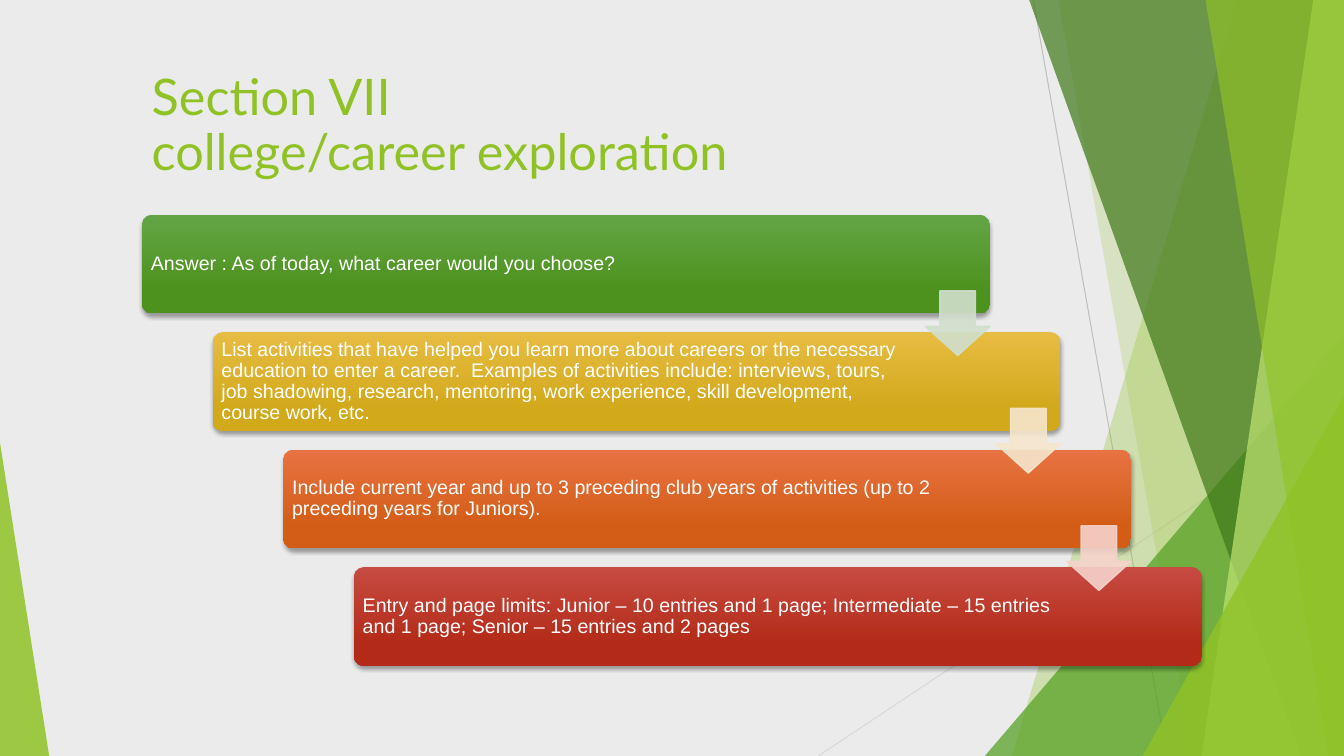
"""Build the "Section VII college/career exploration" slide: a descending cascade of four steps."""
from dataclasses import dataclass

from lxml.etree import SubElement
from pptx import Presentation
from pptx.dml.color import RGBColor
from pptx.enum.shapes import MSO_CONNECTOR, MSO_SHAPE
from pptx.enum.text import MSO_ANCHOR, MSO_AUTO_SIZE, PP_ALIGN
from pptx.oxml.ns import qn
from pptx.util import Cm, Pt

SLIDE_WIDTH, SLIDE_HEIGHT = 33.87, 19.05
FACET_TOP = -0.02
CARD_LEFT, CARD_TOP, CARD_WIDTH, CARD_HEIGHT = 3.58, 5.41, 21.36, 2.49
ARROW_LEFT, ARROW_TOP, ARROW_SIZE = 23.32, 7.33, 1.63
STEP_RIGHT, STEP_DOWN = 1.78, 2.96

BACKGROUND = RGBColor(0xEB, 0xEB, 0xEB)
WHITE = RGBColor(0xFF, 0xFF, 0xFF)
LIME = RGBColor(0x90, 0xC2, 0x26)
PALE_LIME = RGBColor(0xC0, 0xE4, 0x74)
GREEN = RGBColor(0x54, 0xA0, 0x21)
DARK_GREEN = RGBColor(0x3F, 0x78, 0x19)
GREY = RGBColor(0xBF, 0xBF, 0xBF)
LIGHT_GREY = RGBColor(0xD9, 0xD9, 0xD9)
GREEN_TOP, GREEN_BOTTOM = RGBColor(0x63, 0xA5, 0x45), RGBColor(0x4D, 0x92, 0x1E)
GOLD_TOP, GOLD_BOTTOM = RGBColor(0xE7, 0xBC, 0x43), RGBColor(0xD2, 0xA9, 0x1B)
ORANGE_TOP, ORANGE_BOTTOM = RGBColor(0xE8, 0x72, 0x42), RGBColor(0xD3, 0x5D, 0x16)
RED_TOP, RED_BOTTOM = RGBColor(0xC7, 0x4B, 0x42), RGBColor(0xB3, 0x2B, 0x18)
ARROW_COLORS = (
    RGBColor(0xD1, 0xDF, 0xCD),
    RGBColor(0xF5, 0xE6, 0xCD),
    RGBColor(0xF6, 0xD3, 0xCC),
)


@dataclass(frozen=True)
class Ray:
    """A thin straight line across the backdrop."""
    start: tuple[float, float]
    end: tuple[float, float]
    color: RGBColor


@dataclass(frozen=True)
class Facet:
    """A full-height band from a slanted left edge to the right slide edge."""
    top_x: float
    bottom_x: float
    color: RGBColor
    opacity: int


@dataclass(frozen=True)
class Wedge:
    """A right triangle standing on the bottom slide edge."""
    left: float
    top: float
    width: float
    apex: float
    color: RGBColor
    opacity: int


@dataclass(frozen=True)
class Step:
    """One card of the cascade."""
    text: str
    top_color: RGBColor
    bottom_color: RGBColor


RAYS = (
    Ray((26.04, 0), (29.41, SLIDE_HEIGHT), GREY),
    Ray((SLIDE_WIDTH, 10.24), (20.62, SLIDE_HEIGHT), LIGHT_GREY),
)
BACKDROP = (
    Facet(31.19, 25.5, LIME, 30),
    Facet(26.67, 30.05, LIME, 20),
    Wedge(24.82, 8.46, 9.05, 1, GREEN, 72),
    Facet(25.93, 32.79, DARK_GREEN, 70),
    Facet(33.1, 30.28, PALE_LIME, 70),
    Facet(30.38, 33.48, LIME, 65),
    Wedge(28.8, 9.98, 5.07, 1, LIME, 80),
    Wedge(0, 11.15, 1.24, 0, LIME, 85),
)
STEPS = (
    Step("Answer : As of today, what career would you choose?", GREEN_TOP, GREEN_BOTTOM),
    Step("List activities that have helped you learn more about careers or the necessary "
         "education to enter a career.  Examples of activities include: interviews, tours, "
         "job shadowing, research, mentoring, work experience, skill development, "
         "course work, etc.", GOLD_TOP, GOLD_BOTTOM),
    Step("Include current year and up to 3 preceding club years of activities (up to 2 "
         "preceding years for Juniors).", ORANGE_TOP, ORANGE_BOTTOM),
    Step("Entry and page limits: Junior – 10 entries and 1 page; Intermediate – 15 entries "
         "and 1 page; Senior – 15 entries and 2 pages", RED_TOP, RED_BOTTOM),
)


def set_opacity(shape, percent: int) -> None:
    """Make every colour of the shape's fill and line translucent."""
    for color in shape.element.spPr.iter(qn("a:srgbClr")):
        SubElement(color, qn("a:alpha"), val=str(percent * 1000))


def draw_ray(slide, ray: Ray) -> None:
    """Draw one thin backdrop line."""
    connector = slide.shapes.add_connector(
        MSO_CONNECTOR.STRAIGHT, *(Cm(value) for value in ray.start + ray.end))
    connector.line.color.rgb = ray.color
    connector.line.width = Pt(0.75)
    SubElement(connector.element.spPr, qn("a:effectLst"))


def draw_backdrop_part(slide, part: Facet | Wedge) -> None:
    """Draw one translucent facet or wedge."""
    if isinstance(part, Facet):
        top, right, bottom = Cm(FACET_TOP), Cm(SLIDE_WIDTH), Cm(SLIDE_HEIGHT)
        builder = slide.shapes.build_freeform(Cm(part.top_x), top)
        builder.add_line_segments([(right, top), (right, bottom), (Cm(part.bottom_x), bottom)])
        shape = builder.convert_to_shape()
    else:
        shape = slide.shapes.add_shape(
            MSO_SHAPE.ISOSCELES_TRIANGLE, Cm(part.left), Cm(part.top),
            Cm(part.width), Cm(SLIDE_HEIGHT - part.top))
        shape.adjustments[0] = part.apex
    shape.shadow.inherit = False
    shape.fill.solid()
    shape.fill.fore_color.rgb = part.color
    shape.line.fill.background()
    set_opacity(shape, part.opacity)


def write_title(slide) -> None:
    """Place and format the title."""
    title = slide.shapes.title
    title.left, title.top, title.width, title.height = Cm(3.57), Cm(1.67), Cm(28.32), Cm(3.05)
    frame = title.text_frame
    frame.text = "Section VII \vcollege/career exploration"
    frame.auto_size = MSO_AUTO_SIZE.NONE
    frame.vertical_anchor = MSO_ANCHOR.MIDDLE
    paragraph = frame.paragraphs[0]
    paragraph.alignment = PP_ALIGN.LEFT
    paragraph.line_spacing = 0.9
    paragraph.font.name = "Lato"
    paragraph.font.size = Pt(36)
    paragraph.font.color.rgb = LIME


def add_soft_shadow(shape) -> None:
    """Give the shape a short shadow straight below it."""
    shape.shadow.inherit = False
    effects = shape.element.spPr.find(qn("a:effectLst"))
    shadow = SubElement(effects, qn("a:outerShdw"), blurRad=str(Pt(3)), dist=str(Pt(2)),
                        dir="5400000", rotWithShape="0")
    color = SubElement(shadow, qn("a:srgbClr"), val="000000")
    SubElement(color, qn("a:alpha"), val="35000")


def draw_card(slide, index: int, step: Step) -> None:
    """Draw one card of the cascade with its text."""
    card = slide.shapes.add_shape(
        MSO_SHAPE.ROUNDED_RECTANGLE, Cm(CARD_LEFT + index * STEP_RIGHT),
        Cm(CARD_TOP + index * STEP_DOWN), Cm(CARD_WIDTH), Cm(CARD_HEIGHT))
    card.adjustments[0] = 0.1
    card.line.fill.background()
    card.fill.gradient()
    card.fill.gradient_angle = 270
    stops = zip(card.fill.gradient_stops, (step.top_color, step.bottom_color), (0, 0.78))
    for stop, color, position in stops:
        stop.color.rgb = color
        stop.position = position
    add_soft_shadow(card)

    frame = card.text_frame
    frame.word_wrap = True
    frame.vertical_anchor = MSO_ANCHOR.MIDDLE
    frame.margin_left, frame.margin_right = Cm(0.15), Cm(3.6)
    frame.margin_top = frame.margin_bottom = Cm(0.15)
    frame.text = step.text
    paragraph = frame.paragraphs[0]
    paragraph.alignment = PP_ALIGN.LEFT
    paragraph.line_spacing = 0.9
    paragraph.font.name = "Arial"
    paragraph.font.size = Pt(14)
    paragraph.font.color.rgb = WHITE


def draw_arrow(slide, index: int, color: RGBColor) -> None:
    """Draw the arrow leading from one card to the next."""
    arrow = slide.shapes.add_shape(
        MSO_SHAPE.DOWN_ARROW, Cm(ARROW_LEFT + index * STEP_RIGHT),
        Cm(ARROW_TOP + index * STEP_DOWN), Cm(ARROW_SIZE), Cm(ARROW_SIZE))
    arrow.adjustments[0], arrow.adjustments[1] = 0.55, 0.45
    arrow.shadow.inherit = False
    arrow.fill.solid()
    arrow.fill.fore_color.rgb = arrow.line.color.rgb = color
    arrow.line.width = Pt(1)
    set_opacity(arrow, 90)


def main() -> None:
    """Build and save the presentation."""
    presentation = Presentation()
    presentation.slide_width, presentation.slide_height = Cm(SLIDE_WIDTH), Cm(SLIDE_HEIGHT)
    slide = presentation.slides.add_slide(presentation.slide_layouts.get_by_name("Title Only"))
    slide.background.fill.solid()
    slide.background.fill.fore_color.rgb = BACKGROUND
    for ray in RAYS:
        draw_ray(slide, ray)
    for part in BACKDROP:
        draw_backdrop_part(slide, part)
    write_title(slide)
    for index, step in enumerate(STEPS):
        draw_card(slide, index, step)
    for index, color in enumerate(ARROW_COLORS):
        draw_arrow(slide, index, color)
    presentation.save("out.pptx")


if __name__ == "__main__":
    main()
